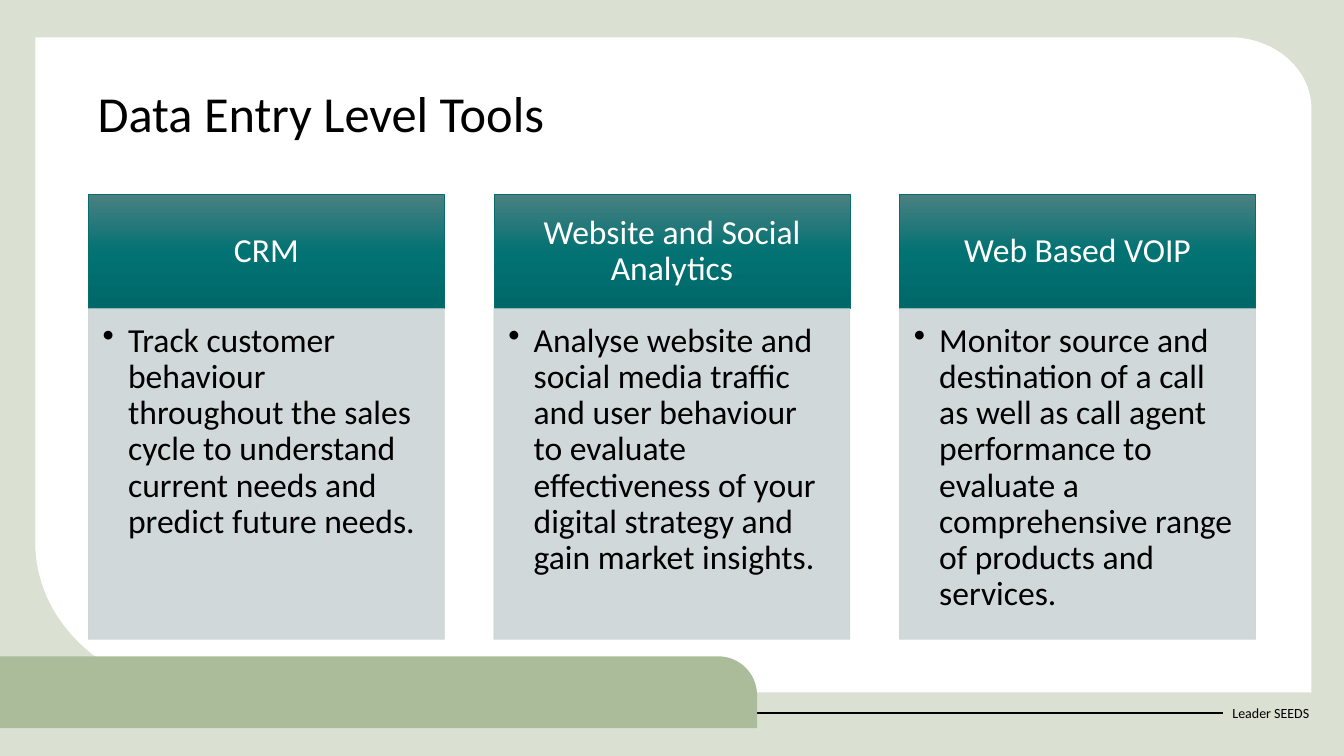
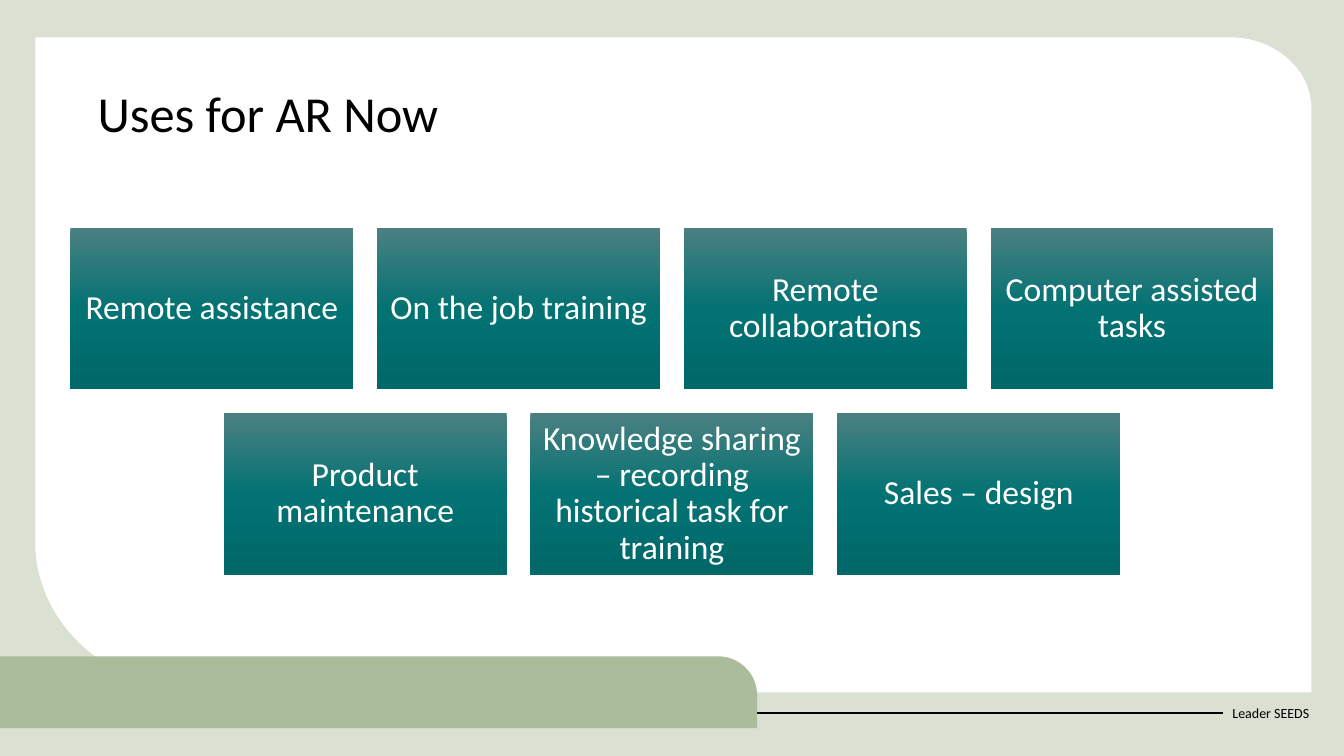
import copy
import math

from lxml import etree
from pptx import Presentation
from pptx import util as u
from pptx.dml.color import RGBColor
from pptx.enum import shapes, text
from pptx.oxml.ns import qn

# Shared style
FONT = "Calibri"
BLACK, WHITE = "000000", "FFFFFF"
SAGE_LIGHT, SAGE = "DAE0D2", "AABC99"
TEAL_EDGE, GREY = "086D6E", "CCD4D5"
TEAL_STOPS = [(0, "4B8081"), (0.5, "037273"), (1, "006869")]
SLIDE_W, SLIDE_H = 33.87, 19.05
MIDDLE, TOP = text.MSO_ANCHOR.MIDDLE, text.MSO_ANCHOR.TOP
CENTER, LEFT = text.PP_ALIGN.CENTER, text.PP_ALIGN.LEFT

# Slide content
TOOLS = [
    ("CRM",
     "Track customer behaviour throughout the sales cycle to understand "
     "current needs and predict future needs."),
    ("Website and Social Analytics",
     "Analyse website and social media traffic and user behaviour to evaluate "
     "effectiveness of your digital strategy and gain market insights."),
    ("Web Based VOIP",
     "Monitor source and destination of a call as well as call agent "
     "performance to evaluate a comprehensive range of products and services."),
]
AR_USES = [
    ["Remote assistance", "On the job training", "Remote collaborations",
     "Computer assisted tasks"],
    ["Product maintenance",
     "Knowledge sharing – recording historical task for training",
     "Sales – design"],
]


def rgb(value):
    return RGBColor.from_string(value)


def set_text(sp, words, size, color, align=LEFT, anchor=TOP,
             insets=(0.25, 0.13, 0.25, 0.13), spacing=0.9, bullet=False):
    tf = sp.text_frame
    tf.text = words
    tf.word_wrap = True
    tf.vertical_anchor = anchor
    tf.margin_left, tf.margin_top, tf.margin_right, tf.margin_bottom = map(u.Cm, insets)
    p = tf.paragraphs[0]
    p.alignment = align
    p.line_spacing = spacing
    if bullet:
        ppr = p._p.get_or_add_pPr()
        ppr.set("marL", str(u.Cm(0.64)))
        ppr.set("indent", str(-u.Cm(0.64)))
        etree.SubElement(ppr, qn("a:buChar")).set("char", "•")
    for r in p.runs:
        r.font.name = FONT
        r.font.size = u.Pt(size)
        r.font.color.rgb = rgb(color)


def add_text(s, x, y, w, h, words, size, **options):
    sp = s.shapes.add_textbox(u.Cm(x), u.Cm(y), u.Cm(w), u.Cm(h))
    set_text(sp, words, size, BLACK, **options)
    return sp


def add_box(s, x, y, w, h, edge=None):
    sp = s.shapes.add_shape(shapes.MSO_SHAPE.RECTANGLE,
                            u.Cm(x), u.Cm(y), u.Cm(w), u.Cm(h))
    sp.shadow.inherit = False
    if edge:
        sp.line.color.rgb = rgb(edge)
        sp.line.width = u.Pt(0.5)
    else:
        sp.line.fill.background()
    return sp


def add_teal_box(s, x, y, w, h, words, insets, edge=None):
    sp = add_box(s, x, y, w, h, edge)
    sp.fill.gradient()
    sp.fill.gradient_angle = 270
    # The default gradient has two stops; a third is needed
    stops = sp._element.spPr.find(".//" + qn("a:gsLst"))
    stops.append(copy.deepcopy(stops[0]))
    for stop, (position, color) in zip(sp.fill.gradient_stops, TEAL_STOPS):
        stop.position = position
        stop.color.rgb = rgb(color)
    set_text(sp, words, 24, WHITE, CENTER, MIDDLE, insets)


def add_grey_box(s, x, y, w, h, words):
    sp = add_box(s, x, y, w, h, GREY)
    sp.fill.solid()
    sp.fill.fore_color.rgb = rgb(GREY)
    for color in sp._element.spPr.iter(qn("a:srgbClr")):
        etree.SubElement(color, qn("a:alpha")).set("val", "90000")
    set_text(sp, words, 24, BLACK, insets=(0.36, 0.36, 0.48, 0.53), bullet=True)


def corner(cx, cy, rx, ry, start):
    """Points of a quarter ellipse, clockwise from the start angle."""
    angles = [math.radians(start + step * 3) for step in range(31)]
    return [(cx + rx * math.cos(a), cy + ry * math.sin(a)) for a in angles]


def add_outline(s, points, color):
    emu = [(u.Cm(x), u.Cm(y)) for x, y in points]
    builder = s.shapes.build_freeform(*emu[0])
    builder.add_line_segments(emu[1:], close=True)
    sp = builder.convert_to_shape()
    sp.shadow.inherit = False
    sp.fill.solid()
    sp.fill.fore_color.rgb = rgb(color)
    sp.line.fill.background()


def add_rule(s, x, y, target):
    line = s.shapes.add_connector(shapes.MSO_CONNECTOR.STRAIGHT,
                                  u.Cm(x), u.Cm(y), target.left, u.Cm(y))
    line.end_connect(target, 1)
    line.line.color.rgb = rgb(BLACK)
    line.line.width = u.Pt(1.5)
    etree.SubElement(line._element.spPr, qn("a:effectLst"))


def add_slide(prs, title):
    s = prs.slides.add_slide(prs.slide_layouts[6])
    s.background.fill.solid()
    s.background.fill.fore_color.rgb = rgb(SAGE_LIGHT)
    # White panel with two rounded corners
    left, top, right, bottom = 0.89, 0.94, 33.05, 17.45
    add_outline(s, [(left, top),
                    *corner(right - 2.06, top + 1.8, 2.06, 1.8, -90),
                    (right, bottom),
                    *corner(left + 4.32, bottom - 3.78, 4.32, 3.78, 90)], WHITE)
    # Footer: name, rule and band
    footer = add_text(s, 30.81, 17.45, 2.57, 1.02, "Leader SEEDS", 10,
                      anchor=MIDDLE, spacing=1.0)
    add_rule(s, 0, 17.96, footer)
    right, top, bottom, radius = 19.08, 16.54, 18.35, 0.98
    add_outline(s, [(0, bottom), (0, top),
                    *corner(right - radius, top + radius, radius, radius, -90),
                    (right, bottom)], SAGE)
    add_text(s, 2.21, 2.11, 29.44, 2.24, title, 36)
    return s


def add_columns(s, columns):
    left, top, width, pitch = 2.23, 4.9, 8.97, 10.22
    head_h, body_h = 2.88, 8.33
    for i, (heading, body) in enumerate(columns):
        x = left + i * pitch
        add_teal_box(s, x, top, width, head_h, heading,
                     (0.48, 0.28, 0.48, 0.28), TEAL_EDGE)
        add_grey_box(s, x, top + head_h, width, body_h, body)


def add_centred_rows(s, rows):
    top, width, height, gap = 5.74, 7.13, 4.07, 0.6
    for i, row in enumerate(rows):
        left = (SLIDE_W - len(row) * (width + gap) + gap) / 2
        for j, words in enumerate(row):
            add_teal_box(s, left + j * (width + gap), top + i * (height + gap),
                         width, height, words, (0.25,) * 4)


def main():
    prs = Presentation()
    prs.slide_width, prs.slide_height = u.Cm(SLIDE_W), u.Cm(SLIDE_H)
    add_columns(add_slide(prs, "Data Entry Level Tools"), TOOLS)
    add_centred_rows(add_slide(prs, "Uses for AR Now"), AR_USES)
    prs.save("out.pptx")


if __name__ == "__main__":
    main()
